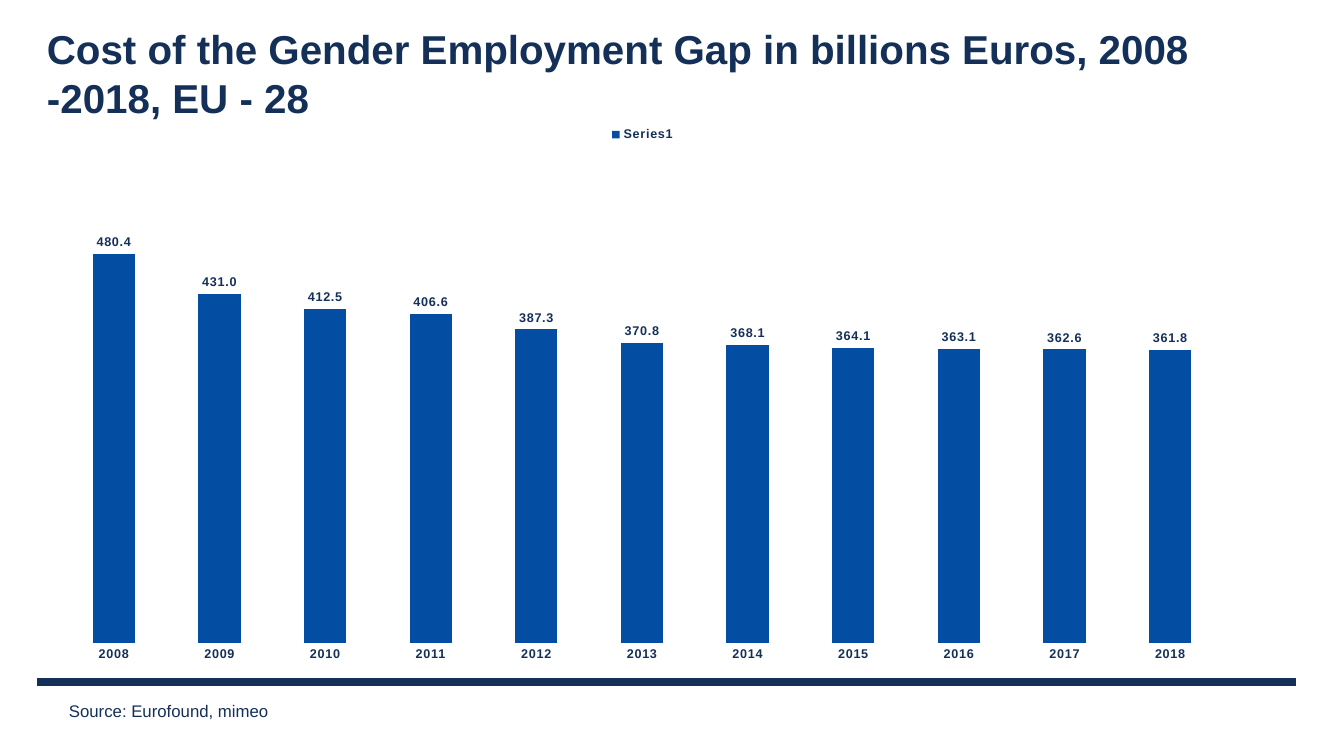
"""Build a slide charting the cost of the gender employment gap in the EU-28."""
from dataclasses import dataclass

from lxml.etree import SubElement
from pptx import Presentation
from pptx.chart.data import CategoryChartData
from pptx.dml.color import RGBColor
from pptx.enum.chart import XL_CHART_TYPE, XL_LABEL_POSITION, XL_LEGEND_POSITION, XL_TICK_MARK
from pptx.enum.shapes import MSO_CONNECTOR
from pptx.enum.text import MSO_ANCHOR
from pptx.oxml.ns import qn
from pptx.util import Inches, Pt

HEADLINE = "Cost of the Gender Employment Gap in billions Euros, 2008 -2018, EU - 28"
SOURCE = "Source: Eurofound, mimeo"
SERIES = "Series1"
COSTS = {
    "2008": 480.4, "2009": 431.0, "2010": 412.5, "2011": 406.6,
    "2012": 387.3, "2013": 370.8, "2014": 368.1, "2015": 364.1,
    "2016": 363.1, "2017": 362.6, "2018": 361.8,
}

PX = Inches(1) / 100.8
SLIDE = (1344, 756)
HEADLINE_BOX = (37, 30, 1259, 86)
CHART_BOX = (37, 116, 1211, 557)
PLOT_BOX = (61, 157, 1162, 486)
RULE = (37, 682, 1296, 682)
SOURCE_BOX = (59, 696, 417, 30)


@dataclass(frozen=True)
class Theme:
    font: str = "Arial"
    navy: RGBColor = RGBColor(0x14, 0x30, 0x58)
    blue: RGBColor = RGBColor(0x03, 0x4E, 0xA2)
    white: RGBColor = RGBColor(0xFF, 0xFF, 0xFF)
    headline: float = 28.8
    source: float = 12
    chart: float = 9
    rule: float = 6
    axis: float = 0.75
    tracking: int = 50


THEME = Theme()


def emu(lengths):
    return [round(length * PX) for length in lengths]


def style(font, size, bold=False):
    font.name = THEME.font
    font.size = Pt(size)
    font.bold = bold
    font.color.rgb = THEME.navy


def add_text(slide, box, words, size, bold=False, anchor=MSO_ANCHOR.TOP):
    frame = slide.shapes.add_textbox(*emu(box)).text_frame
    frame.word_wrap = True
    frame.vertical_anchor = anchor
    run = frame.paragraphs[0].add_run()
    run.text = words
    style(run.font, size, bold)


def add_rule(slide):
    rule = slide.shapes.add_connector(MSO_CONNECTOR.STRAIGHT, *emu(RULE))
    rule.line.color.rgb = THEME.navy
    rule.line.width = Pt(THEME.rule)
    SubElement(rule._element.spPr, qn("a:effectLst"))


def place_plot(chart):
    plot_area = chart._chartSpace.chart.plotArea
    layout = plot_area.find(qn("c:layout"))
    if layout is None:
        layout = SubElement(plot_area, qn("c:layout"))
        plot_area.insert(0, layout)
    manual = SubElement(layout, qn("c:manualLayout"))
    left, top, width, height = CHART_BOX
    x, y, w, h = PLOT_BOX
    settings = {
        "layoutTarget": "inner", "xMode": "edge", "yMode": "edge",
        "x": (x - left) / width, "y": (y - top) / height,
        "w": w / width, "h": h / height,
    }
    for tag, value in settings.items():
        SubElement(manual, qn(f"c:{tag}")).set("val", str(value))


def add_cost_chart(slide):
    costs = CategoryChartData(number_format="#,##0.0")
    costs.categories = list(COSTS)
    costs.add_series(SERIES, list(COSTS.values()))
    chart = slide.shapes.add_chart(
        XL_CHART_TYPE.COLUMN_CLUSTERED, *emu(CHART_BOX), costs).chart
    chart.has_title = False
    style(chart.font, THEME.chart, True)

    chart.has_legend = True
    chart.legend.position = XL_LEGEND_POSITION.TOP
    chart.legend.include_in_layout = False

    years = chart.category_axis
    years.major_tick_mark = XL_TICK_MARK.NONE
    years.format.line.color.rgb = THEME.white
    years.format.line.width = Pt(THEME.axis)

    billions = chart.value_axis
    billions.minimum_scale, billions.maximum_scale = 0, 600
    billions.has_major_gridlines = False
    billions.visible = False

    columns = chart.plots[0]
    columns.gap_width, columns.overlap = 150, -25
    columns.vary_by_categories = False
    fill = columns.series[0].format.fill
    fill.solid()
    fill.fore_color.rgb = THEME.blue

    columns.has_data_labels = True
    labels = columns.data_labels
    labels.show_value = True
    labels.number_format, labels.number_format_is_linked = "#,##0.0", False
    labels.position = XL_LABEL_POSITION.OUTSIDE_END
    for font in (chart.legend.font, years.tick_labels.font, labels.font):
        style(font, THEME.chart, True)
    for properties in chart._chartSpace.iter(qn("a:defRPr")):
        properties.set("spc", str(THEME.tracking))
    place_plot(chart)


def main():
    deck = Presentation()
    deck.slide_width, deck.slide_height = emu(SLIDE)
    slide = deck.slides.add_slide(deck.slide_layouts[6])
    add_rule(slide)
    add_text(slide, HEADLINE_BOX, HEADLINE, THEME.headline, True, MSO_ANCHOR.MIDDLE)
    add_text(slide, SOURCE_BOX, SOURCE, THEME.source)
    add_cost_chart(slide)
    deck.save("out.pptx")


if __name__ == "__main__":
    main()
